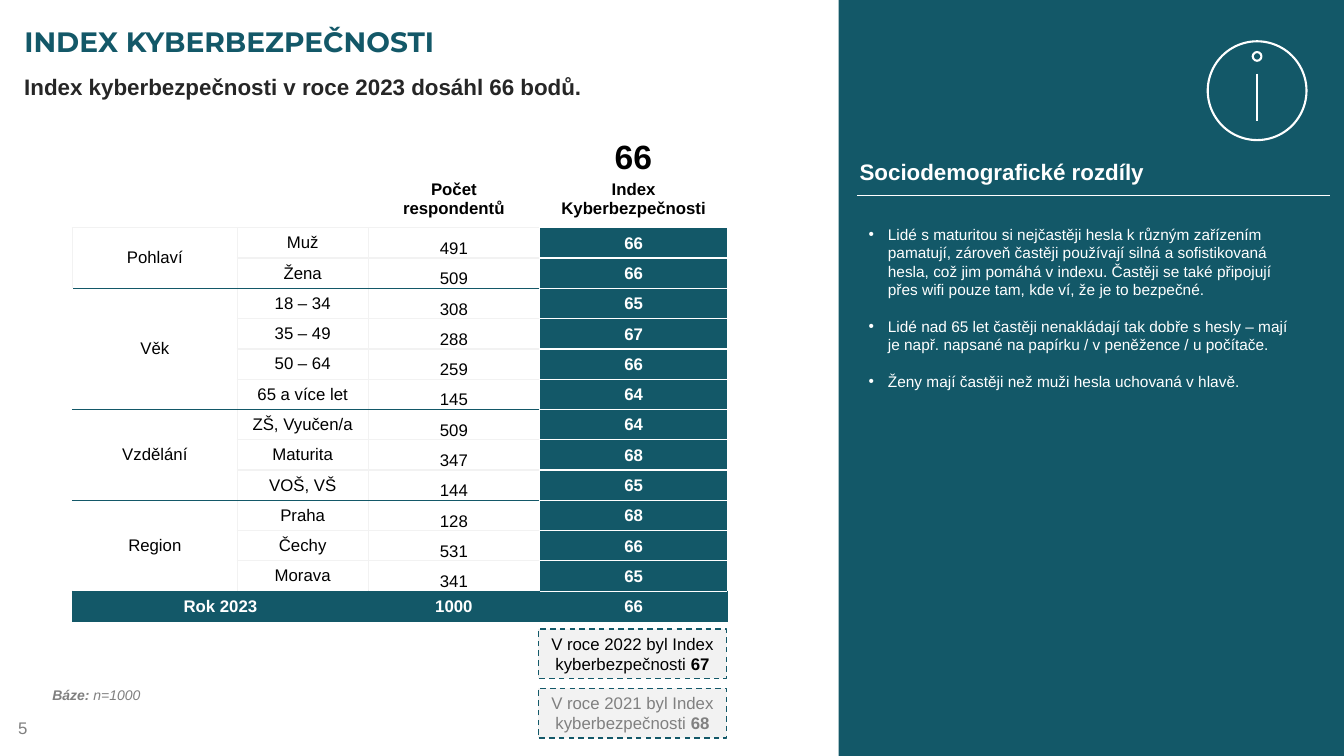
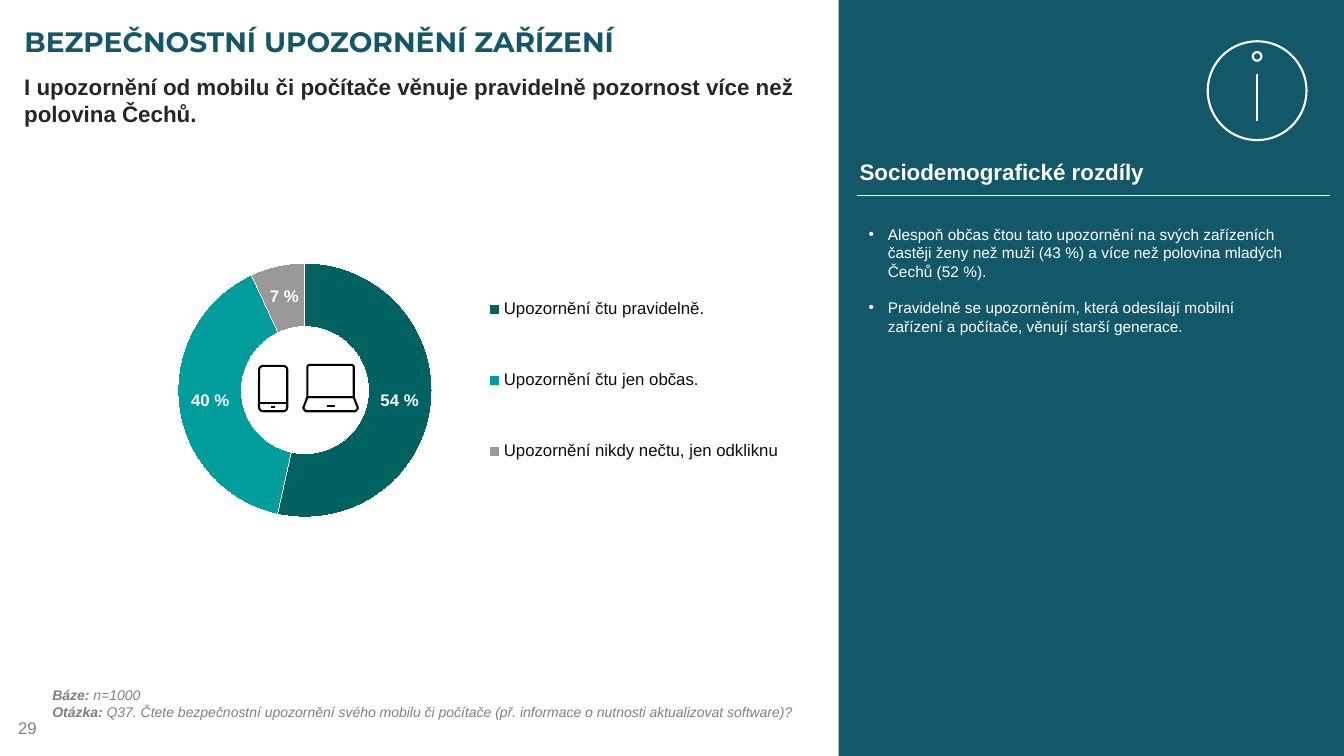
from dataclasses import dataclass
from itertools import accumulate
from typing import NamedTuple

from lxml.etree import SubElement
from pptx import Presentation
from pptx.chart.data import CategoryChartData
from pptx.dml.color import RGBColor
from pptx.enum.chart import XL_CHART_TYPE, XL_LEGEND_POSITION
from pptx.enum.dml import MSO_LINE
from pptx.enum.shapes import MSO_CONNECTOR, MSO_SHAPE
from pptx.enum.text import MSO_ANCHOR, MSO_AUTO_SIZE, PP_ALIGN
from pptx.oxml.ns import qn
from pptx.util import Inches, Pt

COLS, ROWS = 160, 90
UNIT = Inches(7.5) // ROWS


@dataclass(frozen=True)
class Theme:
    accent: str = "135868"
    white: str = "FFFFFF"
    black: str = "000000"
    ink: str = "262626"
    muted: str = "808080"
    pale: str = "F2F2F2"
    legend: str = "0D0D0D"
    slices: tuple[str, ...] = ("006260", "009D9C", "999999")
    title_font: str = "Montserrat"
    font: str = "Arial"
    score: int = 24
    title: int = 20
    heading: int = 16
    body: int = 12
    bullet: int = 11
    note: int = 10


T = Theme()


class Box(NamedTuple):
    x: float
    y: float
    w: float
    h: float

    def emu(self) -> tuple[int, ...]:
        return tuple(grid(v) for v in self)


class Span(NamedTuple):
    text: str
    bold: bool = False


class Group(NamedTuple):
    name: str
    rows: tuple[tuple[str, int, int], ...]


class Page(NamedTuple):
    number: int
    title: str
    subtitle: str
    base: list[list[Span]]
    bullets: list[str]


class YearNote(NamedTuple):
    year: int
    score: int
    color: str


BASE = [Span("Báze: ", True), Span("n=1000")]
QUESTION = [
    Span("Otázka: ", True),
    Span("Q37. Čtete bezpečnostní upozornění svého mobilu či počítače "
         "(př. informace o nutnosti aktualizovat software)?"),
]
INDEX_PAGE = Page(
    5, "INDEX KYBERBEZPEČNOSTI",
    "Index kyberbezpečnosti v roce 2023 dosáhl 66 bodů.",
    [BASE],
    ["Lidé s maturitou si nejčastěji hesla k různým zařízením pamatují, zároveň častěji "
     "používají silná a sofistikovaná hesla, což jim pomáhá v indexu. Častěji se také "
     "připojují přes wifi pouze tam, kde ví, že je to bezpečné.",
     "Lidé nad 65 let častěji nenakládají tak dobře s hesly – mají je např. napsané na "
     "papírku / v peněžence / u počítače.",
     "Ženy mají častěji než muži hesla uchovaná v hlavě."],
)
ALERT_PAGE = Page(
    29, "BEZPEČNOSTNÍ UPOZORNĚNÍ ZAŘÍZENÍ",
    "I upozornění od mobilu či počítače věnuje pravidelně pozornost více než polovina Čechů.",
    [BASE, QUESTION],
    ["Alespoň občas čtou tato upozornění na svých zařízeních častěji ženy než muži (43 %) "
     "a více než polovina mladých Čechů (52 %).",
     "Pravidelně se upozorněním, která odesílají mobilní zařízení a počítače, věnují "
     "starší generace."],
)
GROUPS = (
    Group("Pohlaví", (("Muž", 491, 66), ("Žena", 509, 66))),
    Group("Věk", (("18 – 34", 308, 65), ("35 – 49", 288, 67),
                  ("50 – 64", 259, 66), ("65 a více let", 145, 64))),
    Group("Vzdělání", (("ZŠ, Vyučen/a", 509, 64), ("Maturita", 347, 68), ("VOŠ, VŠ", 144, 65))),
    Group("Region", (("Praha", 128, 68), ("Čechy", 531, 66), ("Morava", 341, 65))),
)
YEAR_NOTES = (YearNote(2022, 67, T.black), YearNote(2021, 68, T.muted))
ANSWERS = {
    "Upozornění čtu pravidelně.": 54,
    "Upozornění čtu jen občas.": 40,
    "Upozornění nikdy nečtu, jen odkliknu": 7,
}


def grid(v: float) -> int:
    return round(v * UNIT)


def rgb(color: str) -> RGBColor:
    return RGBColor.from_string(color)


def set_font(f, *, size: int, color: str, bold: bool = False, italic: bool = False,
             font: str = T.font) -> None:
    f.name, f.size, f.bold, f.italic = font, Pt(size), bold, italic
    f.color.rgb = rgb(color)


def add_text(p, text: str, **fmt) -> None:
    r = p.add_run()
    r.text = text
    set_font(r.font, **fmt)


def add_box(s, box: Box, paras: list[list[Span]], *, wrap: bool = True,
            anchor=MSO_ANCHOR.TOP, inset: tuple[float, float] = (0.1, 0.05), **fmt):
    tf = s.shapes.add_textbox(*box.emu()).text_frame
    tf.word_wrap, tf.vertical_anchor = wrap, anchor
    tf.margin_left = tf.margin_right = Inches(inset[0])
    tf.margin_top = tf.margin_bottom = Inches(inset[1])
    for i, spans in enumerate(paras):
        p = tf.add_paragraph() if i else tf.paragraphs[0]
        for span in spans:
            add_text(p, span.text, bold=span.bold, **fmt)
    return tf


def style(sp, *, fill: str | None = None, line: str | None = None, width: float = 1.5):
    sp.shadow.inherit = False
    if fill:
        sp.fill.solid()
        sp.fill.fore_color.rgb = rgb(fill)
    else:
        sp.fill.background()
    if line:
        sp.line.color.rgb = rgb(line)
        sp.line.width = Pt(width)
    else:
        sp.line.fill.background()
    return sp


def add_shape(s, kind, box: Box, **look):
    return style(s.shapes.add_shape(kind, *box.emu()), **look)


def add_line(s, x1: float, y1: float, x2: float, y2: float, color: str, width: float = 1.5) -> None:
    c = s.shapes.add_connector(MSO_CONNECTOR.STRAIGHT, *map(grid, (x1, y1, x2, y2)))
    c.line.color.rgb = rgb(color)
    c.line.width = Pt(width)
    SubElement(c._element.spPr, qn("a:effectLst"))


def add_bullets(s, bullets: list[str]) -> None:
    tf = add_box(s, Box(102.24, 26.16, 52.44, 23), [[Span(b)] for b in bullets],
                 size=T.bullet, color=T.white)
    for i, p in enumerate(tf.paragraphs):
        pPr = p._p.get_or_add_pPr()
        pPr.set("marL", str(Inches(0.19)))
        pPr.set("indent", str(-Inches(0.19)))
        SubElement(pPr, qn("a:buFont"), typeface=T.font)
        SubElement(pPr, qn("a:buChar"), char="•")
        if i:
            p.space_before = Pt(13)


def add_panel(s, bullets: list[str]) -> None:
    add_shape(s, MSO_SHAPE.RECTANGLE, Box(99.84, 0, COLS - 99.84, ROWS), fill=T.accent)
    add_line(s, 102, 23.28, 158.28, 23.28, T.white, 0.5)
    add_box(s, Box(101.16, 18.24, 36.7, 4.44), [[Span("Sociodemografické rozdíly", True)]],
            wrap=False, size=T.heading, color=T.white)
    cx = 149.66
    for cy, d in ((10.8, 11.76), (6.72, 1.04)):
        add_shape(s, MSO_SHAPE.OVAL, Box(cx - d / 2, cy - d / 2, d, d), line=T.white)
    add_line(s, cx, 8.76, cx, 14.4, T.white)
    add_bullets(s, bullets)


def add_page(prs, page: Page):
    s = prs.slides.add_slide(prs.slide_layouts[5])
    add_panel(s, page.bullets)
    title = s.shapes.title
    title.left, title.top, title.width, title.height = Box(1.7, 1.7, 156.6, 6.36).emu()
    tf = title.text_frame
    tf.auto_size, tf.vertical_anchor = MSO_AUTO_SIZE.NONE, MSO_ANCHOR.MIDDLE
    tf.paragraphs[0].alignment = PP_ALIGN.LEFT
    add_text(tf.paragraphs[0], page.title, size=T.title, color=T.accent, bold=True,
             font=T.title_font)
    add_box(s, Box(1.7, 8.16, 98.16, 8.4), [[Span(page.subtitle, True)]],
            size=T.heading, color=T.ink)
    add_box(s, Box(6.24, 81.72, 139, 4.08), page.base, inset=(0, 0),
            size=T.note, color=T.muted, italic=True)
    add_box(s, Box(0.6, 84.24, 37.3, 4.8), [[Span(str(page.number))]], inset=(0.13, 0.07),
            anchor=MSO_ANCHOR.MIDDLE, size=T.body, color=T.muted)
    return s


def set_cell(cell, text: str, *, edges: tuple[str, ...], fill: str | None = None,
             color: str = T.black, bold: bool = False, anchor=MSO_ANCHOR.MIDDLE,
             tight: bool = False) -> None:
    tcPr = cell._tc.get_or_add_tcPr()
    for side, edge in zip("LRTB", edges):
        ln = SubElement(tcPr, qn(f"a:ln{side}"), w=str(Pt(1)))
        SubElement(SubElement(ln, qn("a:solidFill")), qn("a:srgbClr"), val=edge)
    if fill:
        cell.fill.solid()
        cell.fill.fore_color.rgb = rgb(fill)
    else:
        cell.fill.background()
    cell.vertical_anchor = anchor
    if tight:
        cell.margin_left = cell.margin_right = cell.margin_top = Inches(0.01)
        cell.margin_bottom = 0
    p = cell.text_frame.paragraphs[0]
    p.alignment = PP_ALIGN.CENTER
    if text:
        add_text(p, text, size=T.body, color=color, bold=bold)


def add_index_table(s) -> None:
    widths, heights = (19.6, 15.6, 20.4, 22.4), (6.84, *[3.6] * 13)
    box = Box(8.64, 20.28, sum(widths), sum(heights))
    tbl = s.shapes.add_table(len(heights), len(widths), *box.emu()).table
    tbl.first_row = tbl.horz_banding = False
    for items, sizes, side in ((tbl.columns, widths, "width"), (tbl.rows, heights, "height")):
        for item, size in zip(items, sizes):
            setattr(item, side, grid(size))

    white = (T.white,) * 4
    solid = dict(fill=T.accent, color=T.white, bold=True)
    for c, text in enumerate(("", "", "Počet respondentů", "Index Kyberbezpečnosti")):
        set_cell(tbl.cell(0, c), text, bold=True,
                 edges=(*white[:3], T.white if c == 3 else T.pale))
    starts = accumulate((len(g.rows) for g in GROUPS), initial=1)
    for g, (group, start) in enumerate(zip(GROUPS, starts)):
        end = start + len(group.rows) - 1
        top_edge = T.accent if g else T.pale
        for r, (label, count, score) in enumerate(group.rows, start):
            top = top_edge if r == start else T.pale
            bottom = T.accent if r == end else T.pale
            set_cell(tbl.cell(r, 0), group.name if r == start else "",
                     edges=(T.white if g else T.pale, T.pale, top, bottom))
            set_cell(tbl.cell(r, 1), label, edges=(T.pale, T.pale, top, bottom))
            set_cell(tbl.cell(r, 2), str(count), edges=(T.pale, T.white, top, bottom),
                     anchor=MSO_ANCHOR.BOTTOM, tight=True)
            set_cell(tbl.cell(r, 3), str(score), edges=white, tight=True, **solid)
        tbl.cell(start, 0).merge(tbl.cell(end, 0))
    last = len(heights) - 1
    for c, text in enumerate(("Rok 2023", "", "1000", "66")):
        top = T.white if c == 3 else T.accent
        set_cell(tbl.cell(last, c), text, edges=(T.accent, T.accent, top, T.accent),
                 tight=c == 3, **solid)
    for r in (0, last):
        tbl.cell(r, 0).merge(tbl.cell(r, 1))


def add_year_notes(s) -> None:
    for i, note in enumerate(YEAR_NOTES):
        sp = add_shape(s, MSO_SHAPE.RECTANGLE, Box(64.08, 74.88 + i * 7.08, 22.44, 5.88),
                       fill=T.pale, line=T.accent, width=1)
        sp.line.dash_style = MSO_LINE.DASH
        p = sp.text_frame.paragraphs[0]
        p.alignment = PP_ALIGN.CENTER
        add_text(p, f"V roce {note.year} byl Index kyberbezpečnosti ",
                 size=T.body, color=note.color)
        add_text(p, str(note.score), size=T.body, color=note.color, bold=True)


def set_layout(parent, index: int, share: Box, *, inner: bool = False) -> None:
    for old in parent.findall(qn("c:layout")):
        parent.remove(old)
    layout = SubElement(parent, qn("c:layout"))
    manual = SubElement(layout, qn("c:manualLayout"))
    if inner:
        SubElement(manual, qn("c:layoutTarget"), val="inner")
    for axis in "xy":
        SubElement(manual, qn(f"c:{axis}Mode"), val="edge")
    for key, value in share._asdict().items():
        SubElement(manual, qn(f"c:{key}"), val=str(value))
    parent.insert(index, layout)


def add_answer_chart(s) -> None:
    data = CategoryChartData()
    data.categories = list(ANSWERS)
    data.add_series("Series 1", list(ANSWERS.values()))
    chart = s.shapes.add_chart(XL_CHART_TYPE.DOUGHNUT, *Box(9, 23.28, 88.08, 47.28).emu(),
                               data).chart
    chart.has_title = False
    set_font(chart.font, size=T.note, color=T.black)
    chart.has_legend = True
    chart.legend.position = XL_LEGEND_POSITION.RIGHT
    chart.legend.include_in_layout = False
    set_font(chart.legend.font, size=T.body, color=T.legend)
    set_layout(chart.legend._element, 1, Box(0.53, 0.13, 0.45, 0.67))
    set_layout(chart._chartSpace.chart.plotArea, 0, Box(0.1, 0.17, 0.42, 0.64), inner=True)
    plot = chart.plots[0]
    plot.vary_by_categories = True
    plot.has_data_labels = True
    labels = plot.data_labels
    labels.show_value, labels.show_percentage = True, False
    labels.number_format, labels.number_format_is_linked = '#,##0\\ "%"', False
    set_font(labels.font, size=T.body, color=T.white, bold=True)
    for i, color in enumerate(T.slices):
        fmt = plot.series[0].points[i].format
        fmt.fill.solid()
        fmt.fill.fore_color.rgb = rgb(color)
        fmt.line.color.rgb = rgb(T.white)


def add_devices(s) -> None:
    phone = add_shape(s, MSO_SHAPE.ROUNDED_RECTANGLE, Box(30.84, 43.56, 3.36, 5.4), line=T.black)
    phone.adjustments[0] = 0.14
    screen = add_shape(s, MSO_SHAPE.ROUND_2_SAME_RECTANGLE, Box(36.6, 43.44, 5.52, 3.84),
                       line=T.black)
    screen.adjustments[0] = 0.07
    base = [(42.12, 47.28), (36.6, 47.28), (36.1, 48.6), (36.4, 48.96), (42.32, 48.96),
            (42.62, 48.6)]
    start, *rest = [(grid(x), grid(y)) for x, y in base]
    fb = s.shapes.build_freeform(*start)
    fb.add_line_segments(rest, close=True)
    style(fb.convert_to_shape(), line=T.black)
    for x1, x2, y in ((38.88, 39.84, 48.36), (30.84, 34.2, 48), (32.28, 32.76, 48.48)):
        add_line(s, x1, y, x2, y, T.black)


def main() -> None:
    prs = Presentation()
    prs.slide_width, prs.slide_height = grid(COLS), grid(ROWS)
    s = add_page(prs, INDEX_PAGE)
    add_index_table(s)
    add_box(s, Box(72, 15.6, 7.56, 6), [[Span("66", True)]], size=T.score, color=T.black)
    add_year_notes(s)
    s = add_page(prs, ALERT_PAGE)
    add_answer_chart(s)
    add_devices(s)
    prs.save("out.pptx")


if __name__ == "__main__":
    main()
